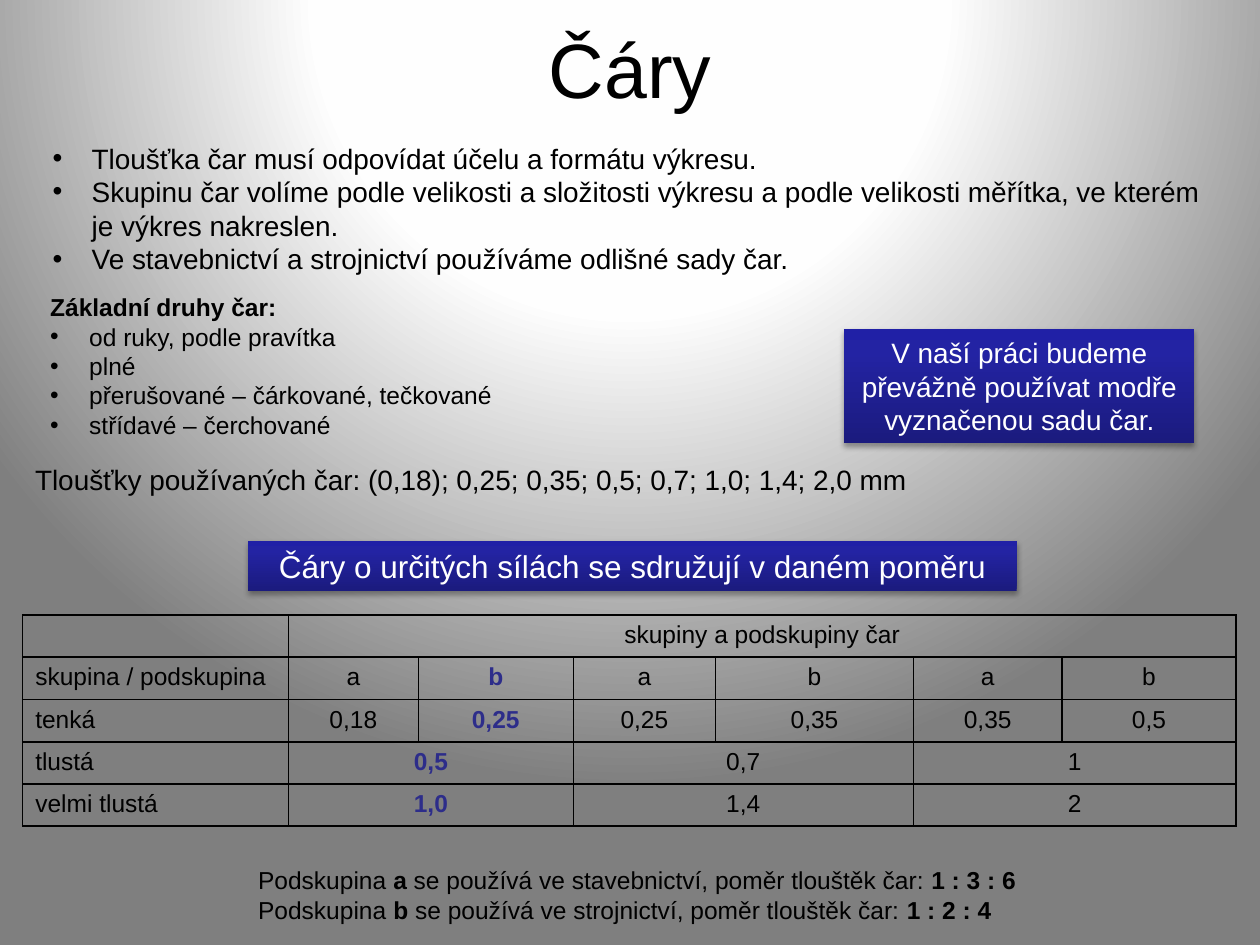
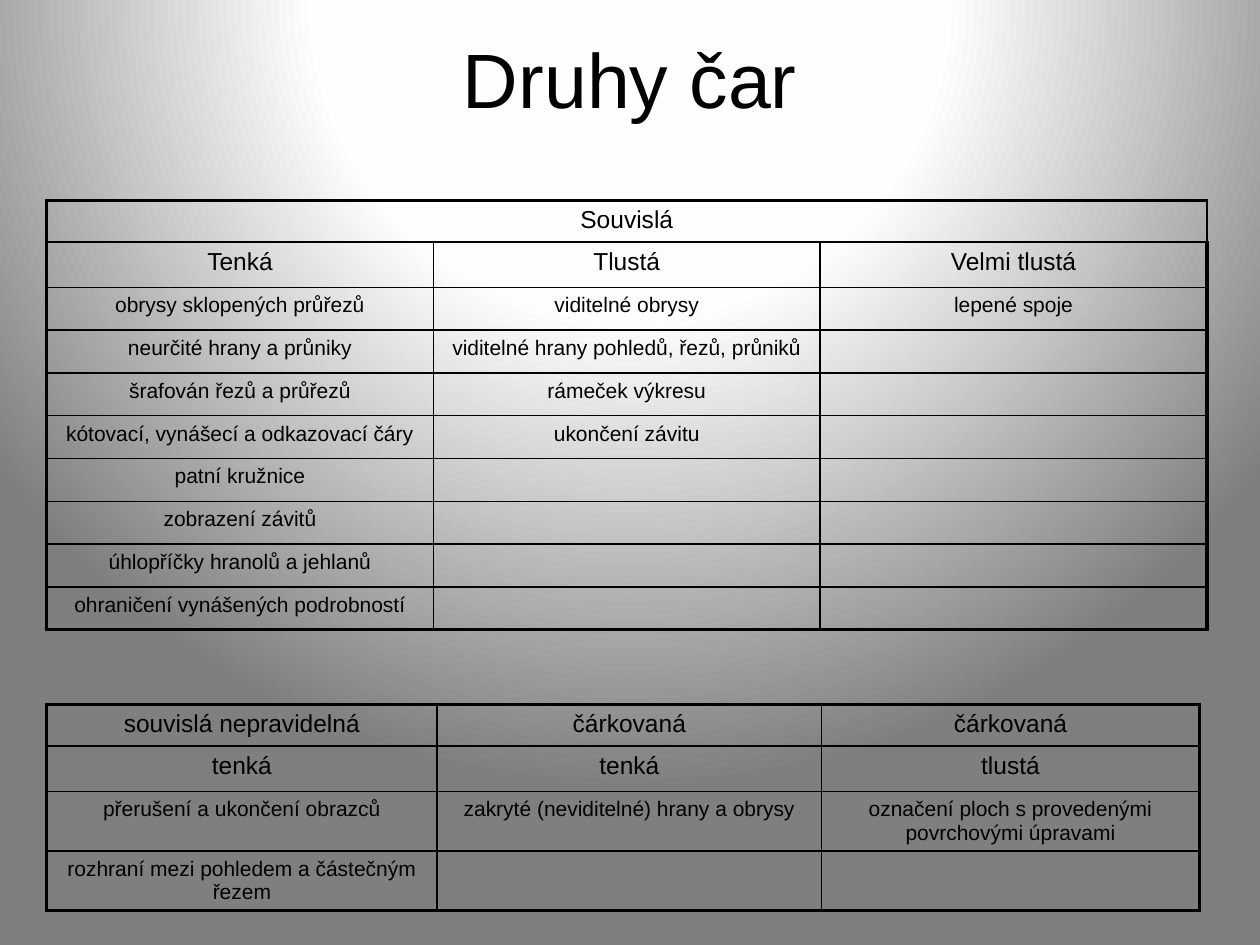
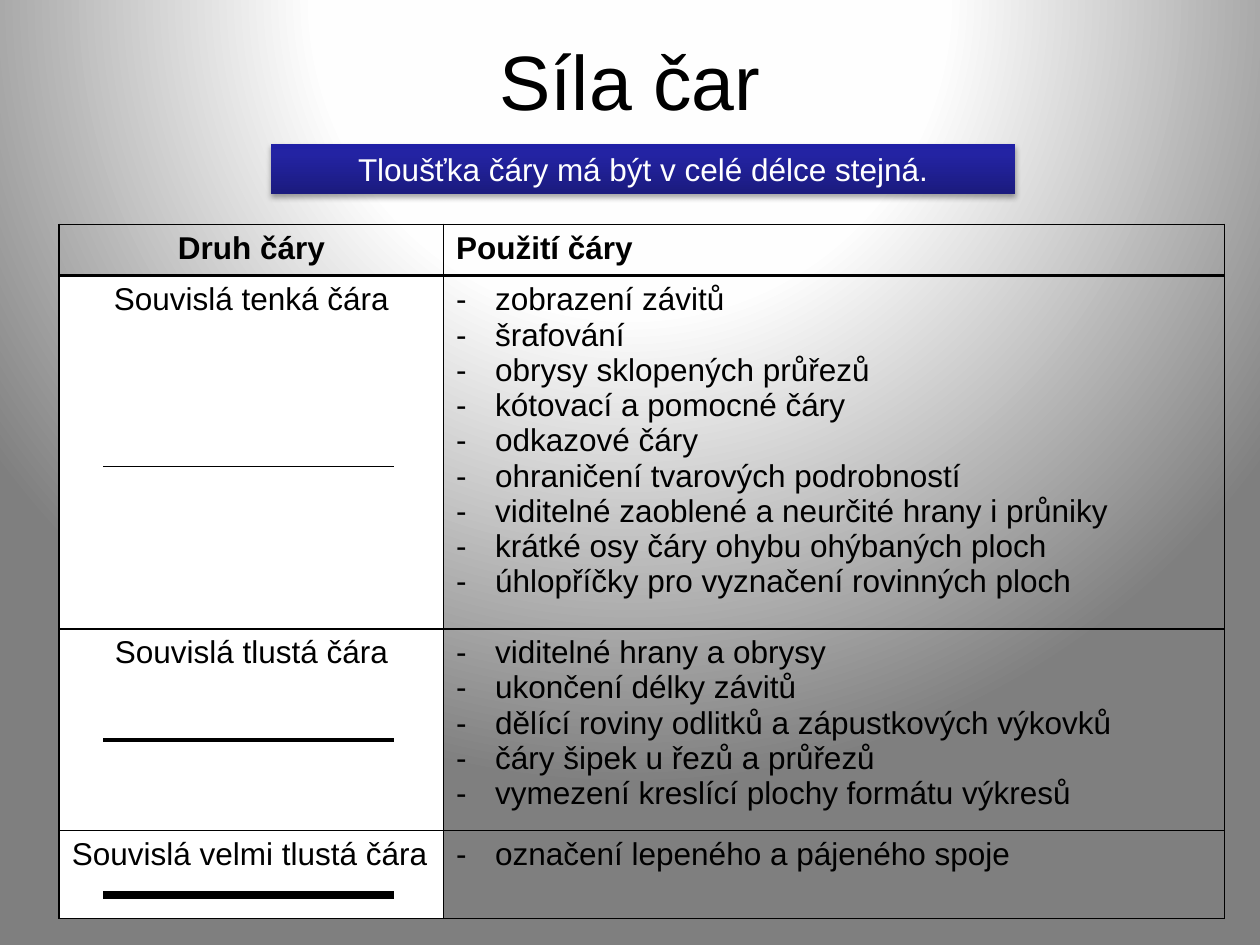
from lxml import etree
from pptx import Presentation
from pptx.dml.color import RGBColor
from pptx.enum.shapes import MSO_CONNECTOR, MSO_SHAPE
from pptx.enum.text import MSO_ANCHOR, MSO_AUTO_SIZE, PP_ALIGN
from pptx.oxml import parse_xml
from pptx.oxml.ns import nsdecls, qn
from pptx.util import Inches, Pt

LEFT, MID = PP_ALIGN.LEFT, PP_ALIGN.CENTER
CENTRE = MSO_ANCHOR.MIDDLE
GROW = MSO_AUTO_SIZE.SHAPE_TO_FIT_TEXT
RECT, LINE = MSO_SHAPE.RECTANGLE, MSO_CONNECTOR.STRAIGHT

THEME = {
    "font": "Arial",
    "ink": "000000",
    "paper": "FFFFFF",
    "accent": "2D2D8A",
    "title": 44,
    "large": 18,
    "body": 16,
    "note": 14,
    "small": 12,
    "indent": 0.31,
    "back": ([(0, "FFFFFF"), (40, "FEFEFE"), (100, "7F7F7F")],
             '<a:path path="circle"><a:fillToRect l="50000" t="-80000" r="50000" b="180000"/></a:path>'),
    "banner": ([(0, "1B1B7E"), (80, "2323A3"), (100, "2020A6")],
               '<a:lin ang="16200000" scaled="0"/>'),
    "shadow": '<a:outerShdw blurRad="40000" dist="23000" dir="5400000" rotWithShape="0">'
              '<a:srgbClr val="000000"><a:alpha val="35000"/></a:srgbClr></a:outerShdw>',
}
NOTE, SMALL, BODY, LARGE = (THEME[k] for k in ("note", "small", "body", "large"))
INK, PAPER = THEME["ink"], THEME["paper"]

grads = {}
for name in ("back", "banner"):
    stops, path = THEME[name]
    marks = "".join(f'<a:gs pos="{pos * 1000}"><a:srgbClr val="{tint}"/></a:gs>' for pos, tint in stops)
    grads[name] = f'<a:gradFill {nsdecls("a")} rotWithShape="1"><a:gsLst>{marks}</a:gsLst>{path}</a:gradFill>'


def write(frame, text, size, align=LEFT, color=INK, strong=None):
    """Fill a frame line by line: *bold*, and a leading "• " or "- " makes a bullet."""
    frame.word_wrap = True
    for i, line in enumerate(text.split("\n")):
        para = frame.add_paragraph() if i else frame.paragraphs[0]
        para.alignment = align
        if line[:2] in ("• ", "- "):
            props = para._p.get_or_add_pPr()
            props.set("marL", str(Inches(THEME["indent"])))
            props.set("indent", str(-Inches(THEME["indent"])))
            etree.SubElement(props, qn("a:buFont"), typeface=THEME["font"])
            etree.SubElement(props, qn("a:buChar"), char=line[0])
            line = line[2:]
        for j, part in enumerate(line.split("*")):
            if part:
                run = para.add_run()
                run.text = part
                bold = j % 2 == 1
                form = {"name": THEME["font"], "size": Pt(size), "bold": bold}
                for key, value in form.items():
                    setattr(run.font, key, value)
                run.font.color.rgb = RGBColor.from_string(strong if bold and strong else color)
        if not line:
            etree.SubElement(para._p, qn("a:endParaRPr"), sz=str(size * 100))


def grid(slide, at, cols, heights, rows, sizes, aligns, outer=1, rule=1, strong=None, first=None):
    """Draw a ruled table; None joins a cell to the one on its left, short rows end empty."""
    count, wide = len(rows), len(cols)
    box = [Inches(v) for v in (*at, sum(cols), sum(heights))]
    table = slide.shapes.add_table(count, wide, *box).table
    table.first_row = table.horz_banding = False
    for col, width in zip(table.columns, cols):
        col.width = Inches(width)
    for r, row in enumerate(rows):
        table.rows[r].height = Inches(heights[r])
        row = row + [""] * (wide - len(row))
        for c, text in enumerate(row):
            cell = table.cell(r, c)
            write(cell.text_frame, text or "", sizes[r], aligns[c], strong=strong)
            if first and r and c == 0:
                cell.fill.solid()
                cell.fill.fore_color.rgb = RGBColor.from_string(first)
            else:
                cell.fill.background()
            sides = {
                "L": 1 if c else outer,
                "R": 1 if c < wide - 1 else outer,
                "T": outer if r == 0 else rule if r == 1 else 1,
                "B": outer if r == count - 1 else rule if r == 0 else 1,
            }
            props = cell._tc.get_or_add_tcPr()
            for i, (side, width) in enumerate(sides.items()):
                props.insert(i, parse_xml(
                    f'<a:ln{side} {nsdecls("a")} w="{Pt(width)}"><a:solidFill>'
                    f'<a:srgbClr val="{INK}"/></a:solidFill></a:ln{side}>'))
        for c, text in enumerate(row):
            end = c
            while end + 1 < wide and row[end + 1] is None:
                end += 1
            if text is not None and end > c:
                table.cell(r, c).merge(table.cell(r, end))
    return table


deck = Presentation()
deck.slide_width, deck.slide_height = Inches(10), Inches(7.5)
master = deck.slide_master
master.background.fill.solid()
back = master.element.find(".//" + qn("p:bgPr"))
back.replace(back[0], parse_xml(grads["back"]))

pages = [
    {"title": "Čáry", "at": (0.5, 0.01, 9, 1.06),
     "notes": [
         ((0.32, 1.07, 9.4, 1.18), BODY,
          "• Tloušťka čar musí odpovídat účelu a formátu výkresu.\n"
          "• Skupinu čar volíme podle velikosti a složitosti výkresu a podle velikosti měřítka, "
          "ve kterém je výkres nakreslen.\n"
          "• Ve stavebnictví a strojnictví používáme odlišné sady čar."),
         ((0.3, 2.27, 9.06, 1.28), NOTE,
          "*Základní druhy čar:*\n• od ruky, podle pravítka\n• plné\n"
          "• přerušované – čárkované, tečkované\n• střídavé – čerchované"),
         ((0.18, 3.62, 9.3, 0.37), BODY,
          "Tloušťky používaných čar: (0,18); 0,25; 0,35; 0,5; 0,7; 1,0; 1,4; 2,0 mm"),
         ((1.95, 6.82, 6.5, 0.57), NOTE,
          "Podskupina *a* se používá ve stavebnictví, poměr tlouštěk čar: *1 : 3 : 6*\n"
          "Podskupina *b* se používá ve strojnictví, poměr tlouštěk čar: *1 : 2 : 4*")],
     "banners": [
         ((1.97, 4.29, 6.1, 0.4), LARGE, "Čáry o určitých sílách se sdružují v daném poměru"),
         ((6.7, 2.61, 2.78, 0.91), BODY,
          "V naší práci budeme převážně používat modře vyznačenou sadu čar.")]},
    {"title": "Druhy čar", "at": (0, 0, 10, 1.24), "notes": [], "banners": []},
    {"title": "Síla čar", "at": (0.5, 0.01, 9, 1.25), "notes": [],
     "banners": [((2.15, 1.14, 5.91, 0.4), LARGE, "Tloušťka čáry má být v celé délce stejná.")]},
]

slides = []
for page in pages:
    slide = deck.slides.add_slide(deck.slide_layouts[5])
    slides.append(slide)
    title = slide.shapes.title
    for key, value in zip(("left", "top", "width", "height"), page["at"]):
        setattr(title, key, Inches(value))
    title.text_frame.vertical_anchor = CENTRE
    write(title.text_frame, page["title"], THEME["title"], MID)
    for at, size, text in page["notes"]:
        box = slide.shapes.add_textbox(*map(Inches, at))
        box.text_frame.auto_size = GROW
        write(box.text_frame, text, size)
    for at, size, text in page["banners"]:
        shape = slide.shapes.add_shape(RECT, *map(Inches, at))
        shape.line.fill.background()
        props = shape._element.spPr
        props.insert(2, parse_xml(grads["banner"]))
        props.append(parse_xml(f'<a:effectLst {nsdecls("a")}>{THEME["shadow"]}</a:effectLst>'))
        shape.text_frame.auto_size = GROW
        write(shape.text_frame, text, size, MID, PAPER)

groups, kinds, uses = slides

grid(groups, (0.18, 4.88), [2.11, 1.03, 1.23, 1.13, 1.57, 1.18, 1.38],
     [0.33, 0.34, 0.33, 0.33, 0.33], [
         ["", "skupiny a podskupiny čar"] + [None] * 5,
         ["skupina / podskupina", "a", "*b*", "a", "b", "a", "b"],
         ["tenká", "0,18", "*0,25*", "0,25", "0,35", "0,35", "0,5"],
         ["tlustá", "*0,5*", None, "0,7", None, "1", None],
         ["velmi tlustá", "*1,0*", None, "1,4", None, "2", None],
     ], [NOTE] * 5, [LEFT] + [MID] * 6, strong=THEME["accent"])

grid(kinds, (0.37, 1.59), [3.07] * 3, [0.33, 0.36] + [0.34] * 8, [
    ["Souvislá", None, None],
    ["Tenká", "Tlustá", "Velmi tlustá"],
    ["obrysy sklopených průřezů", "viditelné obrysy", "lepené spoje"],
    ["neurčité hrany a průniky", "viditelné hrany pohledů, řezů, průniků"],
    ["šrafován řezů a průřezů", "rámeček výkresu"],
    ["kótovací, vynášecí a odkazovací čáry", "ukončení závitu"],
    ["patní kružnice"],
    ["zobrazení závitů"],
    ["úhlopříčky hranolů a jehlanů"],
    ["ohraničení vynášených podrobností"],
], [NOTE] * 2 + [SMALL] * 8, [MID] * 3, outer=2.25)

grid(kinds, (0.37, 5.59), [3.1, 3.05, 3], [0.33, 0.36, 0.47, 0.47], [
    ["souvislá nepravidelná", "čárkovaná", "čárkovaná"],
    ["tenká", "tenká", "tlustá"],
    ["přerušení a ukončení obrazců", "zakryté (neviditelné) hrany a obrysy",
     "označení ploch s provedenými povrchovými úpravami"],
    ["rozhraní mezi pohledem a částečným řezem"],
], [NOTE] * 2 + [SMALL] * 2, [MID] * 3, outer=2.25)

table = grid(uses, (0.47, 1.78), [3.05, 6.2], [0.41, 2.8, 1.6, 0.7], [
    ["*Druh čáry*", "*Použití čáry*"],
    ["Souvislá tenká čára",
     "- zobrazení závitů\n- šrafování\n- obrysy sklopených průřezů\n"
     "- kótovací a pomocné čáry\n- odkazové čáry\n- ohraničení tvarových podrobností\n"
     "- viditelné zaoblené a neurčité hrany i průniky\n"
     "- krátké osy čáry ohybu ohýbaných ploch\n"
     "- úhlopříčky pro vyznačení rovinných ploch"],
    ["Souvislá tlustá čára",
     "- viditelné hrany a obrysy\n- ukončení délky závitů\n"
     "- dělící roviny odlitků a zápustkových výkovků\n"
     "- čáry šipek u řezů a průřezů\n- vymezení kreslící plochy formátu výkresů"],
    ["Souvislá velmi tlustá čára", "- označení lepeného a pájeného spoje"],
], [LARGE] * 4, [MID, LEFT], rule=2, first=PAPER)
table.cell(3, 0).text_frame.paragraphs[0].alignment = LEFT

for y, width in ((3.7, 0.75), (5.87, 2.25), (7.1, 4.5)):
    line = uses.shapes.add_connector(LINE, *map(Inches, (0.82, y, 3.13, y)))
    line.line.color.rgb = RGBColor.from_string(INK)
    line.line.width = Pt(width)
    etree.SubElement(line._element.spPr, qn("a:effectLst"))

deck.save("out.pptx")
